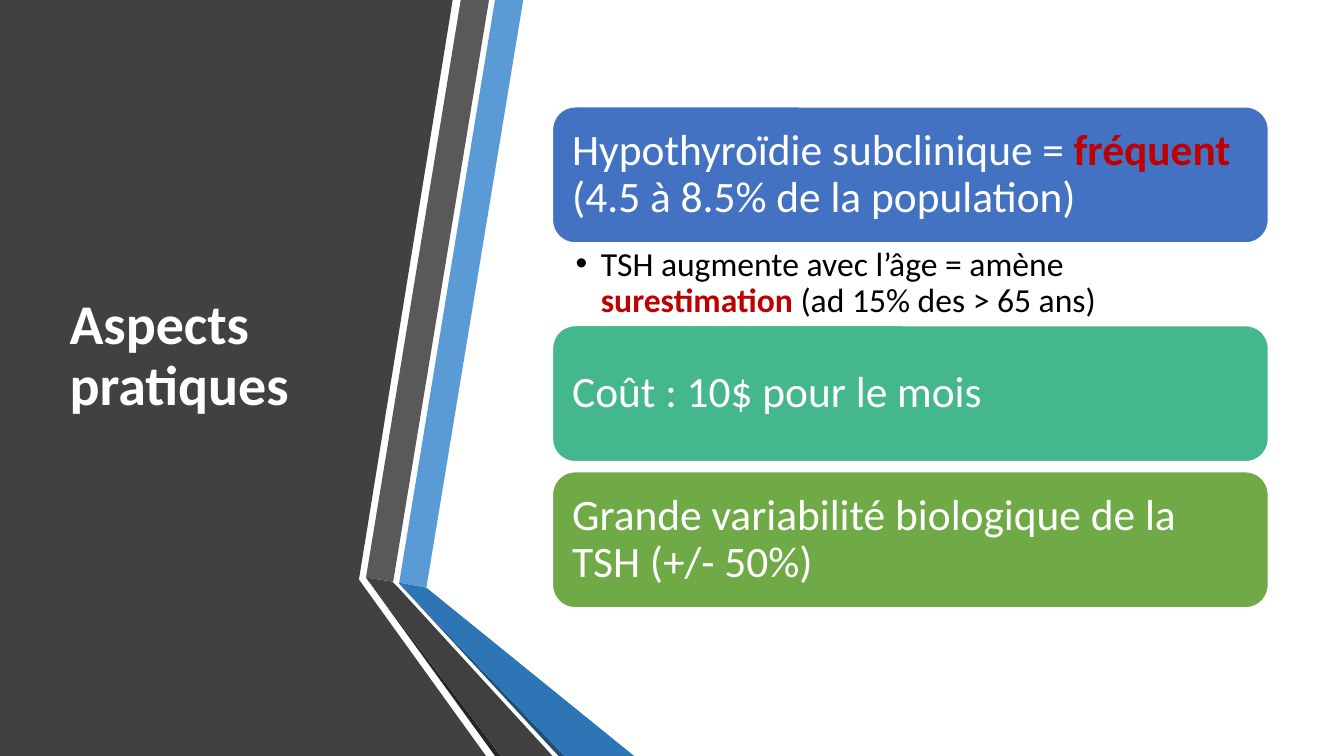
from dataclasses import dataclass

from lxml.etree import SubElement
from pptx import Presentation
from pptx.dml.color import RGBColor
from pptx.enum.shapes import MSO_SHAPE
from pptx.enum.text import MSO_ANCHOR, MSO_AUTO_SIZE, PP_ALIGN
from pptx.oxml.ns import qn
from pptx.slide import Slide
from pptx.text.text import TextFrame
from pptx.util import Inches, Pt

COLORS = {
    "panel": "414141",
    "light_blue": "5B9BD5",
    "grey": "595959",
    "near_black": "262626",
    "navy": "1E4E79",
    "blue": "2E75B5",
    "charcoal": "404040",
    "prevalence": "4372C3",
    "cost": "44B78C",
    "variability": "6FAA47",
    "emphasis": "C00000",
    "white": "FFFFFF",
    "black": "000000",
}
CARD_LEFT, CARD_WIDTH, CARD_HEIGHT = 5.48, 7.1, 1.35


@dataclass(frozen=True)
class Ribbon:
    color: str
    points: tuple[tuple[float, float], ...]


@dataclass(frozen=True)
class Span:
    text: str
    emphasis: bool = False


@dataclass(frozen=True)
class Card:
    top: float
    color: str
    spans: tuple[Span, ...]


RIBBONS = (
    Ribbon("panel", ((0, 0), (4.49, 0), (3.56, 5.75), (4.82, 7.5), (0, 7.5))),
    Ribbon("light_blue", ((3.96, 5.78), (4.23, 5.83), (5.19, 0), (4.91, 0))),
    Ribbon("grey", ((4.85, 0), (4.57, 0), (3.63, 5.73), (3.9, 5.77))),
    Ribbon("near_black", ((3.63, 5.73), (4.91, 7.5), (4.97, 7.5))),
    Ribbon("navy", ((3.96, 5.79), (5.54, 7.5), (5.6, 7.5))),
    Ribbon("blue", ((3.96, 5.78), (3.96, 5.79), (5.6, 7.5), (6.29, 7.5), (4.23, 5.83))),
    Ribbon("charcoal", ((3.63, 5.73), (4.97, 7.5), (5.48, 7.5), (3.95, 5.83), (3.89, 5.77))),
)
CARDS = (
    Card(1.06, "prevalence", (
        Span("Hypothyroïdie subclinique = "),
        Span("fréquent", True),
        Span(" (4.5 à 8.5% de la population)"),
    )),
    Card(3.23, "cost", (Span("Coût : 10$ pour le mois"),)),
    Card(4.68, "variability", (Span("Grande variabilité biologique de la TSH (+/- 50%)"),)),
)
AGE_NOTE = (
    Span("TSH augmente avec l’âge = amène "),
    Span("surestimation", True),
    Span(" (ad 15% des > 65 ans)"),
)


def rgb(color: str) -> RGBColor:
    return RGBColor.from_string(COLORS[color])


def apply_format(target: object, values: dict[str, object]) -> None:
    for attribute, value in values.items():
        setattr(target, attribute, value)


def write_spans(frame: TextFrame, spans: tuple[Span, ...], size: int, color: str,
                margins: tuple[float, float], anchor: MSO_ANCHOR, bold: bool = False) -> None:
    side, edge = (Inches(margin) for margin in margins)
    apply_format(frame, {
        "word_wrap": True,
        "auto_size": MSO_AUTO_SIZE.NONE,
        "vertical_anchor": anchor,
        "margin_left": side,
        "margin_right": side,
        "margin_top": edge,
        "margin_bottom": edge,
    })
    paragraph = frame.paragraphs[0]
    apply_format(paragraph, {"alignment": PP_ALIGN.LEFT, "line_spacing": 0.9})
    for span in spans:
        run = paragraph.add_run()
        run.text = span.text
        apply_format(run.font, {"name": "Calibri", "size": Pt(size), "bold": bold or span.emphasis})
        run.font.color.rgb = rgb("emphasis" if span.emphasis else color)


def draw_ribbon(slide: Slide, ribbon: Ribbon) -> None:
    start, *others = [(Inches(x), Inches(y)) for x, y in ribbon.points]
    builder = slide.shapes.build_freeform(*start)
    builder.add_line_segments(others, close=True)
    band = builder.convert_to_shape()
    band.shadow.inherit = False
    band.fill.solid()
    band.fill.fore_color.rgb = rgb(ribbon.color)
    band.line.fill.background()


def draw_card(slide: Slide, card: Card) -> None:
    box = slide.shapes.add_shape(
        MSO_SHAPE.ROUNDED_RECTANGLE,
        Inches(CARD_LEFT), Inches(card.top), Inches(CARD_WIDTH), Inches(CARD_HEIGHT),
    )
    box.adjustments[0] = 0.167
    box.shadow.inherit = False
    box.fill.solid()
    box.fill.fore_color.rgb = rgb(card.color)
    box.line.color.rgb = rgb("white")
    box.line.width = Pt(1)
    write_spans(box.text_frame, card.spans, 31, "white", (0.13, 0.13), MSO_ANCHOR.MIDDLE)


def draw_age_note(slide: Slide) -> None:
    note = slide.shapes.add_textbox(
        Inches(CARD_LEFT), Inches(CARDS[0].top + CARD_HEIGHT), Inches(CARD_WIDTH), Inches(0.82)
    )
    properties = note.text_frame.paragraphs[0]._p.get_or_add_pPr()
    apply_indent = {"marL": Inches(0.25), "indent": Inches(-0.25)}
    for attribute, value in apply_indent.items():
        properties.set(attribute, str(int(value)))
    bullet_color = SubElement(properties, qn("a:buClr"))
    SubElement(bullet_color, qn("a:srgbClr"), val=COLORS["black"])
    SubElement(properties, qn("a:buFont"), typeface="Arial")
    SubElement(properties, qn("a:buChar"), char="•")
    write_spans(note.text_frame, AGE_NOTE, 24, "black", (0.23, 0.04), MSO_ANCHOR.TOP)


def place_title(slide: Slide) -> None:
    title = slide.shapes.title
    apply_format(title, {
        "left": Inches(0.59),
        "top": Inches(0.75),
        "width": Inches(3.04),
        "height": Inches(5.58),
    })
    write_spans(title.text_frame, (Span("Aspects pratiques"),), 40, "white",
                (0.1, 0.05), MSO_ANCHOR.MIDDLE, bold=True)
    title.element.getparent().append(title.element)


def main() -> None:
    presentation = Presentation()
    apply_format(presentation, {"slide_width": Inches(13.33), "slide_height": Inches(7.5)})
    slide = presentation.slides.add_slide(presentation.slide_layouts[5])
    for ribbon in RIBBONS:
        draw_ribbon(slide, ribbon)
    place_title(slide)
    for card in CARDS:
        draw_card(slide, card)
    draw_age_note(slide)
    presentation.save("out.pptx")


if __name__ == "__main__":
    main()
